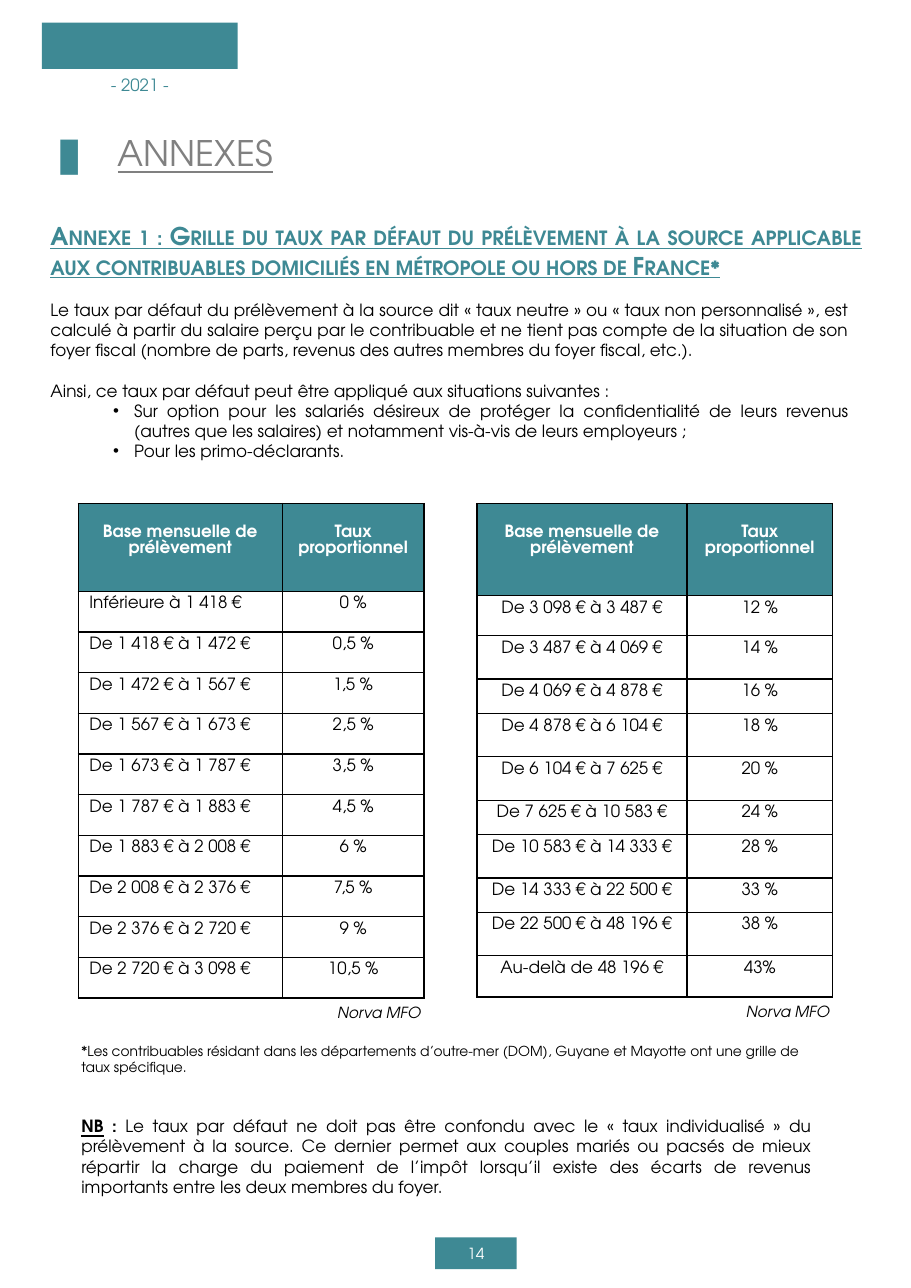
from lxml.etree import SubElement
from pptx import Presentation
from pptx.dml.color import RGBColor
from pptx.enum.shapes import MSO_SHAPE as Shape
from pptx.enum.text import MSO_ANCHOR as Anchor, PP_ALIGN as Align
from pptx.oxml.ns import qn
from pptx.util import Inches, Pt

TEAL = RGBColor(0x3E, 0x89, 0x94)
GRAY = RGBColor(0x80, 0x80, 0x80)
BLACK = RGBColor(0, 0, 0)
WHITE = RGBColor(255, 255, 255)
FONT = "TeX Gyre Adventor"
WIDTH, HEIGHT = Inches(8.27), Inches(11.69)

LOW = [
    ("Inférieure à 1 418 €", "0 %"), ("De 1 418 € à 1 472 €", "0,5 %"),
    ("De 1 472 € à 1 567 €", "1,5 %"), ("De 1 567 € à 1 673 €", "2,5 %"),
    ("De 1 673 € à 1 787 €", "3,5 %"), ("De 1 787 € à 1 883 €", "4,5 %"),
    ("De 1 883 € à 2 008 €", "6 %"), ("De 2 008 € à 2 376 €", "7,5 %"),
    ("De 2 376 € à 2 720 €", "9 %"), ("De 2 720 € à 3 098 €", "10,5 %"),
]
HIGH = [
    ("De 3 098 € à 3 487 €", "12 %"), ("De 3 487 € à 4 069 €", "14 %"),
    ("De 4 069 € à 4 878 €", "16 %"), ("De 4 878 € à 6 104 €", "18 %"),
    ("De 6 104 € à 7 625 €", "20 %"), ("De 7 625 € à 10 583 €", "24 %"),
    ("De 10 583 € à 14 333 €", "28 %"), ("De 14 333 € à 22 500 €", "33 %"),
    ("De 22 500 € à 48 196 €", "38 %"), ("Au-delà de 48 196 €", "43%"),
]


def area(x, y, w, h):
    """Turn percentages of the page into lengths."""
    return [int(n * side / 100) for n, side in zip((x, y, w, h), (WIDTH, HEIGHT) * 2)]


def style(run, size, color=BLACK, bold=False, line=False):
    font = run.font
    font.size, font.name, font.bold, font.underline = Pt(size), FONT, bold, line
    font.color.rgb = color


def write(par, text, size, color=BLACK, align=Align.LEFT, **look):
    par.text = text
    par.alignment = align
    style(par.runs[0], size, color, **look)
    return par.runs[0]


def frame(slide, box):
    text = slide.shapes.add_textbox(*box).text_frame
    text.word_wrap = True
    return text


def plate(slide, box):
    item = slide.shapes.add_shape(Shape.RECTANGLE, *box)
    item.shadow.inherit = False
    item.fill.solid()
    item.fill.fore_color.rgb = TEAL
    item.line.fill.background()
    return item.text_frame


def masthead(slide, box):
    """Place a plain band with the year below it."""
    x, y, w, h = box
    plate(slide, (x, y, w, int(h * 0.6)))
    text = frame(slide, (x, y + int(h * 0.6), w, int(h * 0.4)))
    text.vertical_anchor = Anchor.MIDDLE
    write(text.paragraphs[0], "- 2021 -", 11, TEAL, Align.CENTER)


def folio(slide, box):
    text = plate(slide, box)
    text.vertical_anchor = Anchor.MIDDLE
    write(text.paragraphs[0], "14", 10, WHITE, Align.CENTER)


def heading(slide, box):
    text = frame(slide, box)
    text.margin_left = Inches(0.34)
    text.vertical_anchor = Anchor.MIDDLE
    par = text.paragraphs[0]
    tabs = SubElement(par._p.get_or_add_pPr(), qn("a:tabLst"))
    SubElement(tabs, qn("a:tab"), pos=str(Inches(0.68)), algn="l")
    for part, color, line in (("▐\t", TEAL, False), ("ANNEXES", GRAY, True)):
        run = par.add_run()
        run.text = part
        style(run, 23, color, line=line)


def title(slide, box):
    par = frame(slide, box).paragraphs[0]
    run = write(par, "Annexe 1 : Grille du taux par défaut du prélèvement à la source "
                "applicable aux contribuables domiciliés en métropole ou hors de France*",
                16, TEAL, Align.JUSTIFY, bold=True, line=True)
    run._r.get_or_add_rPr().set("cap", "small")


def intro(slide, box):
    text = frame(slide, box)
    write(text.paragraphs[0],
          "Le taux par défaut du prélèvement à la source dit « taux neutre » ou "
          "« taux non personnalisé », est calculé à partir du salaire perçu par le "
          "contribuable et ne tient pas compte de la situation de son foyer fiscal "
          "(nombre de parts, revenus des autres membres du foyer fiscal, etc.).",
          11, align=Align.JUSTIFY)
    lead = text.add_paragraph()
    write(lead, "Ainsi, ce taux par défaut peut être appliqué aux situations suivantes :",
          11, align=Align.JUSTIFY)
    lead.space_before = Pt(13.2)
    for case in ("Sur option pour les salariés désireux de protéger la confidentialité de "
                 "leurs revenus (autres que les salaires) et notamment vis-à-vis de leurs "
                 "employeurs ;", "Pour les primo-déclarants."):
        par = text.add_paragraph()
        props = par._p.get_or_add_pPr()
        props.set("marL", str(Inches(0.76)))
        props.set("indent", str(Inches(-0.19)))
        SubElement(props, qn("a:buFont"), typeface="Arial")
        SubElement(props, qn("a:buChar"), char="•")
        write(par, case, 11, align=Align.JUSTIFY)


def border(cell):
    props = cell._tc.get_or_add_tcPr()
    for side in ("a:lnL", "a:lnR", "a:lnT", "a:lnB"):
        line = SubElement(props, qn(side), w=str(Pt(1)))
        fill = SubElement(line, qn("a:solidFill"))
        SubElement(fill, qn("a:srgbClr"), val=str(BLACK))


def rates(slide, box, data, share, sizes, align):
    """Draw a rate table with its credit line underneath."""
    x, y, w, h = box
    rows = [("Base mensuelle de prélèvement", "Taux proportionnel")] + data
    grid = slide.shapes.add_table(len(rows), 2, *box).table
    grid.first_row = grid.horz_banding = False
    for col, part in zip(grid.columns, (share, 1 - share)):
        col.width = int(w * part)
    for i, (row, size) in enumerate(zip(rows, sizes)):
        grid.rows[i].height = int(h * size / sum(sizes))
        head = i == 0
        for j, text in enumerate(row):
            cell = grid.cell(i, j)
            side = Align.CENTER if head or j else align
            cell.margin_left = Inches(0.1 if side == Align.LEFT else 0.05)
            cell.margin_right = Inches(0.05)
            cell.margin_top = Inches(0.2 if head else 0.05)
            border(cell)
            cell.fill.solid()
            cell.fill.fore_color.rgb = TEAL if head else WHITE
            par = cell.text_frame.paragraphs[0]
            write(par, text, 11, WHITE if head else BLACK, side, bold=head)
            par.line_spacing = Pt(10)
    credit = frame(slide, (x, y + h, w, Inches(0.27)))
    credit.margin_right = Inches(0.03)
    run = write(credit.paragraphs[0], "Norva MFO", 10, align=Align.RIGHT)
    run.font.italic = True


def notes(slide, box):
    text = frame(slide, box)
    write(text.paragraphs[0],
          "*Les contribuables résidant dans les départements d’outre-mer (DOM), Guyane "
          "et Mayotte ont une grille de taux spécifique.", 9)
    par = text.add_paragraph()
    write(par, "NB", 11, align=Align.JUSTIFY, bold=True, line=True)
    par.space_before = Pt(26.4)
    for part, bold in ((" : ", True), (
            "Le taux par défaut ne doit pas être confondu avec le « taux individualisé » "
            "du prélèvement à la source. Ce dernier permet aux couples mariés ou pacsés de "
            "mieux répartir la charge du paiement de l’impôt lorsqu’il existe des écarts de "
            "revenus importants entre les deux membres du foyer.", False)):
        run = par.add_run()
        run.text = part
        style(run, 11, bold=bold)


def main():
    deck = Presentation()
    deck.slide_width, deck.slide_height = WIDTH, HEIGHT
    slide = deck.slides.add_slide(deck.slide_layouts[6])
    # Top of the page
    masthead(slide, area(4.6, 1.75, 21.5, 5.99))
    heading(slide, area(0.6, 9.7, 97.58, 4.28))
    title(slide, area(4.35, 16.77, 91.41, 5.47))
    intro(slide, area(4.35, 22.84, 90.08, 13.52))
    # Rate tables
    rates(slide, area(8.59, 39.09, 37.97, 38.41), LOW, 0.59,
          [0.8] + [0.37] * 10, Align.LEFT)
    rates(slide, area(52.36, 39.09, 39.06, 38.32), HIGH, 0.59,
          [0.83, 0.36, 0.39, 0.31, 0.39, 0.39, 0.31, 0.39, 0.31, 0.39, 0.37], Align.CENTER)
    # Notes and page number
    notes(slide, area(7.74, 80.5, 82.59, 12.92))
    folio(slide, area(47.76, 96.07, 8.95, 2.48))
    deck.save("out.pptx")


if __name__ == "__main__":
    main()
